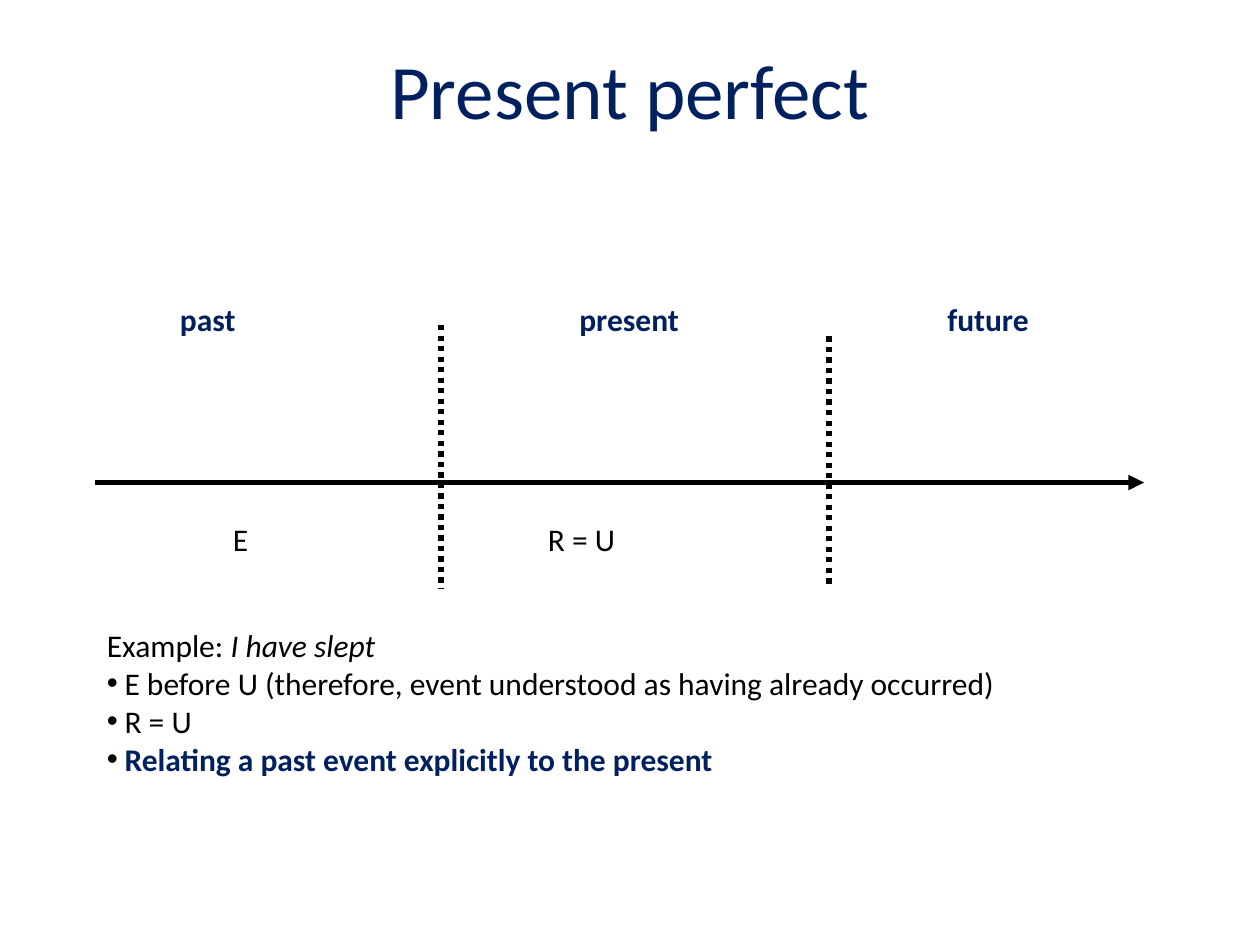
from dataclasses import dataclass

from lxml.etree import SubElement
from pptx import Presentation
from pptx.dml.color import RGBColor
from pptx.enum.dml import MSO_LINE
from pptx.enum.shapes import MSO_CONNECTOR
from pptx.enum.text import MSO_ANCHOR, MSO_AUTO_SIZE, PP_ALIGN
from pptx.oxml.ns import qn
from pptx.util import Inches, Pt

NAVY = RGBColor(0x00, 0x20, 0x60)
BLACK = RGBColor(0x00, 0x00, 0x00)
FONT = "Calibri"
AXIS = 3.83
FOOT = 4.67
INDENT = 0.14


@dataclass(frozen=True)
class Span:
    text: str
    color: RGBColor = BLACK
    size: int = 18
    bold: bool = False
    slant: bool = False


@dataclass(frozen=True)
class Label:
    left: float
    top: float
    width: float
    span: Span


@dataclass(frozen=True)
class Rule:
    start: tuple[float, float]
    end: tuple[float, float]
    arrow: bool = False


RULES = [
    Rule((0.75, AXIS), (9.08, AXIS), arrow=True),
    Rule((3.5, 2.58), (3.5, FOOT)),
    Rule((6.58, 2.67), (6.58, FOOT)),
]

LABELS = [
    Label(1.33, 2.33, 0.65, Span("past", NAVY, bold=True)),
    Label(4.5, 2.33, 1, Span("present", NAVY, bold=True)),
    Label(7.42, 2.33, 0.85, Span("future", NAVY, bold=True)),
    Label(4.25, 4.08, 0.94, Span("R = U")),
    Label(1.75, 4.08, 0.36, Span("E")),
]

INTRO = [Span("Example: "), Span("I have slept", slant=True)]
POINTS = [
    Span("E before U (therefore, event understood as having already occurred)"),
    Span("R = U"),
    Span("Relating a past event explicitly to the present", NAVY, bold=True),
]


def add_box(slide, left: float, top: float, width: float, height: float, wrap: bool = True):
    box = slide.shapes.add_textbox(Inches(left), Inches(top), Inches(width), Inches(height))
    frame = box.text_frame
    frame.word_wrap = wrap
    return frame


def add_span(para, span: Span) -> None:
    run = para.add_run()
    run.text = span.text
    font = run.font
    font.name = FONT
    font.size = Pt(span.size)
    font.bold = span.bold
    font.italic = span.slant
    font.color.rgb = span.color


def add_bullet(para) -> None:
    props = para._p.get_or_add_pPr()
    props.set("marL", str(Inches(INDENT)))
    props.set("indent", str(-Inches(INDENT)))
    tint = SubElement(props, qn("a:buClr"))
    SubElement(tint, qn("a:srgbClr"), val=str(BLACK))
    SubElement(props, qn("a:buFont"), typeface="Arial")
    SubElement(props, qn("a:buChar"), char="•")


def add_title(slide) -> None:
    frame = add_box(slide, 0.5, 0.08, 9, 1.25)
    frame.vertical_anchor = MSO_ANCHOR.MIDDLE
    para = frame.paragraphs[0]
    para.alignment = PP_ALIGN.CENTER
    add_span(para, Span("Present perfect", NAVY, 44))


def add_notes(slide) -> None:
    frame = add_box(slide, 0.75, 4.92, 8.66, 1.62)
    for span in INTRO:
        add_span(frame.paragraphs[0], span)
    for point in POINTS:
        para = frame.add_paragraph()
        add_bullet(para)
        add_span(para, point)


def add_rule(slide, rule: Rule) -> None:
    ends = [Inches(value) for value in rule.start + rule.end]
    line = slide.shapes.add_connector(MSO_CONNECTOR.STRAIGHT, *ends)
    line.line.color.rgb = BLACK
    line.line.width = Pt(3)
    if rule.arrow:
        SubElement(line.line._get_or_add_ln(), qn("a:tailEnd"), type="triangle")
    else:
        line.line.dash_style = MSO_LINE.ROUND_DOT
    SubElement(line._element.spPr, qn("a:effectLst"))


def add_label(slide, label: Label) -> None:
    frame = add_box(slide, label.left, label.top, label.width, 0.4, wrap=False)
    frame.auto_size = MSO_AUTO_SIZE.SHAPE_TO_FIT_TEXT
    add_span(frame.paragraphs[0], label.span)


def main() -> None:
    deck = Presentation()
    deck.slide_width = Inches(10)
    deck.slide_height = Inches(7.5)
    slide = deck.slides.add_slide(deck.slide_layouts[6])
    add_title(slide)
    add_notes(slide)
    for rule in RULES:
        add_rule(slide, rule)
    for label in LABELS:
        add_label(slide, label)
    deck.save("out.pptx")


if __name__ == "__main__":
    main()
